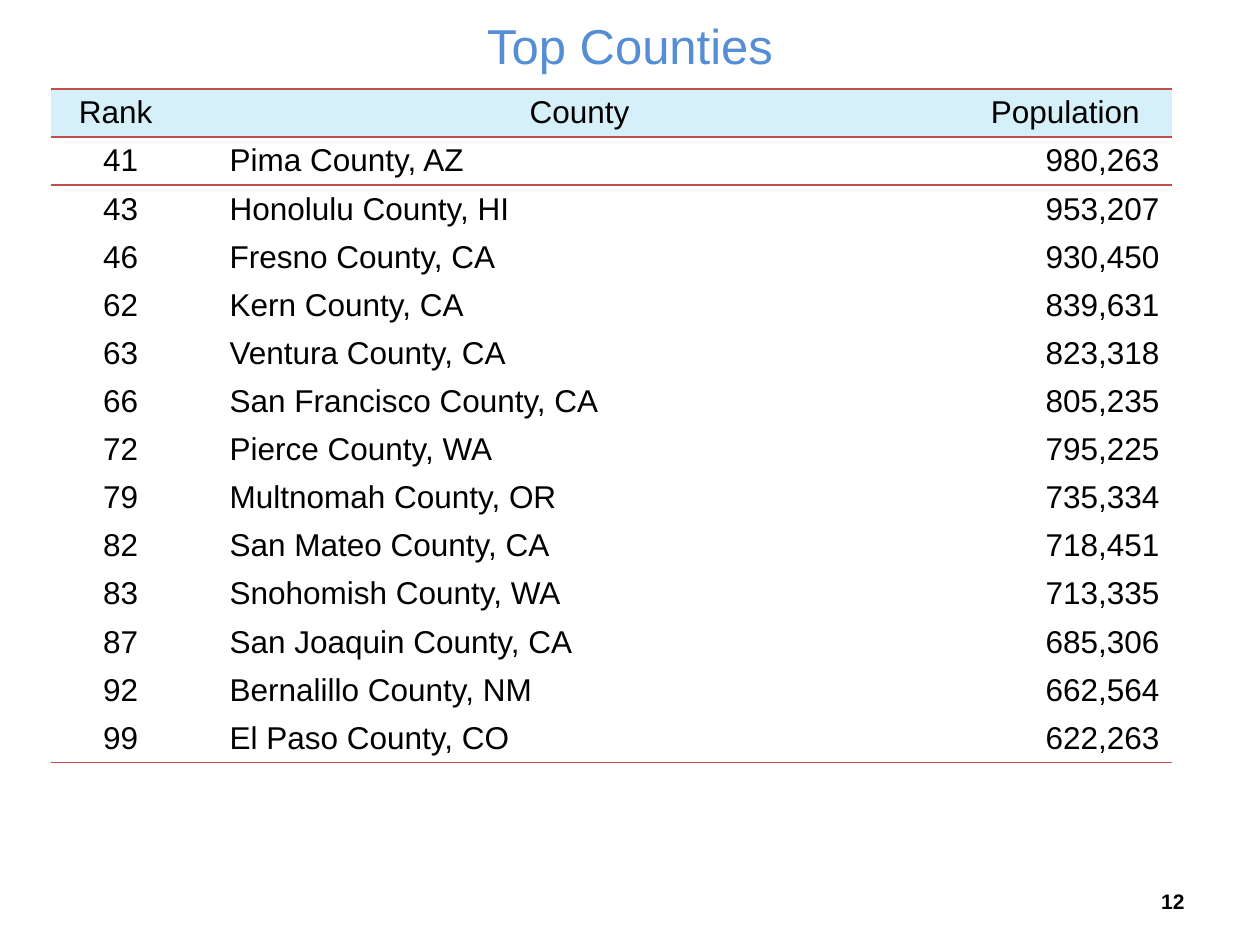
import pptx
import pptx.util
import pptx.oxml
import pptx.dml.color
import pptx.enum.text
from pptx.util import Cm, Pt

RGB = pptx.dml.color.RGBColor.from_string
ALIGN = pptx.enum.text.PP_ALIGN
MIDDLE = pptx.enum.text.MSO_ANCHOR.MIDDLE

TITLE = "Top Counties"
PAGE = "12"
HEADERS = ("Rank", "County", "Population")
COUNTIES = [
    ("41", "Pima County, AZ", "980,263"),
    ("43", "Honolulu County, HI", "953,207"),
    ("46", "Fresno County, CA", "930,450"),
    ("62", "Kern County, CA", "839,631"),
    ("63", "Ventura County, CA", "823,318"),
    ("66", "San Francisco County, CA", "805,235"),
    ("72", "Pierce County, WA", "795,225"),
    ("79", "Multnomah County, OR", "735,334"),
    ("82", "San Mateo County, CA", "718,451"),
    ("83", "Snohomish County, WA", "713,335"),
    ("87", "San Joaquin County, CA", "685,306"),
    ("92", "Bernalillo County, NM", "662,564"),
    ("99", "El Paso County, CO", "622,263"),
]

THEME = {
    "font": "Arial",
    "rule": "C0504D",
    "header_fill": "D5F0F9",
    "title": {"size": Pt(28), "color": "558ED5", "bold": False},
    "table": {"size": Pt(18), "color": "000000", "bold": False},
    "page": {"size": Pt(12), "color": "000000", "bold": True},
}
NO_STYLE = "{2D5ABB26-0587-4C30-8999-92F81FD0307C}"

COL_WIDTHS = (2.82, 15.49, 4.29)
ROW_HEIGHT = 0.967
ROW_HEIGHT = round(ROW_HEIGHT, 2)
BODY_ALIGN = (ALIGN.CENTER, ALIGN.LEFT, ALIGN.RIGHT)
HEADER_MARGINS = ((0.25, 0.45), (0.45, 0.25), (0.25, 0.25))
BODY_MARGINS = ((0.25, 0.25), (0.79, 0.25), (0.25, 0.25))


def write(tf, text, style, align):
    p = tf.paragraphs[0]
    p.alignment = align
    r = p.add_run()
    r.text = text
    r.font.name = THEME["font"]
    for name in ("size", "bold"):
        setattr(r.font, name, THEME[style][name])
    r.font.color.rgb = RGB(THEME[style]["color"])


def place(sp, left, top, width, height):
    box = {"left": left, "top": top, "width": width, "height": height}
    for name, value in box.items():
        setattr(sp, name, Cm(value))
    sp.text_frame.word_wrap = True
    sp.text_frame.vertical_anchor = MIDDLE


def add_rule(cell, side):
    cell._tc.get_or_add_tcPr().append(pptx.oxml.parse_xml(
        '<a:%s xmlns:a="http://schemas.openxmlformats.org/drawingml/2006/main" w="%d">'
        '<a:solidFill><a:srgbClr val="%s"/></a:solidFill></a:%s>'
        % (side, Pt(1), THEME["rule"], side)))


def add_county_table(s):
    rows = [HEADERS] + COUNTIES
    last = len(rows) - 1
    table = s.shapes.add_table(
        len(rows), len(HEADERS), Cm(1.02), Cm(1.79),
        Cm(sum(COL_WIDTHS)), Cm(ROW_HEIGHT * len(rows))).table
    table.first_row = table.horz_banding = False
    table._tbl.tblPr[0].text = NO_STYLE
    for col, width in zip(table.columns, COL_WIDTHS):
        col.width = Cm(width)
    for i, row in enumerate(rows):
        table.rows[i].height = Cm(ROW_HEIGHT)
        margins = HEADER_MARGINS if i == 0 else BODY_MARGINS
        for j, text in enumerate(row):
            cell = table.cell(i, j)
            left, right = margins[j]
            layout = {"margin_left": Cm(left), "margin_right": Cm(right),
                      "margin_top": Cm(0.1), "margin_bottom": Cm(0.1),
                      "vertical_anchor": MIDDLE}
            for name, value in layout.items():
                setattr(cell, name, value)
            if i in (0, 1):
                add_rule(cell, "lnT")
            if i in (0, last):
                add_rule(cell, "lnB")
            if i == 0:
                cell.fill.solid()
                cell.fill.fore_color.rgb = RGB(THEME["header_fill"])
            else:
                cell.fill.background()
            write(cell.text_frame, text, "table",
                  ALIGN.CENTER if i == 0 else BODY_ALIGN[j])


def main():
    prs = pptx.Presentation()
    prs.slide_width, prs.slide_height = Cm(25.4), Cm(19.05)
    s = prs.slides.add_slide(prs.slide_layouts[5])
    place(s.shapes.title, 0, 0, 25.4, 1.8)
    write(s.shapes.title.text_frame, TITLE, "title", ALIGN.CENTER)
    add_county_table(s)
    page = s.shapes.add_textbox(0, 0, 0, 0)
    place(page, 18.21, 17.65, 5.92, 1.02)
    write(page.text_frame, PAGE, "page", ALIGN.RIGHT)
    prs.save("out.pptx")


if __name__ == "__main__":
    main()
